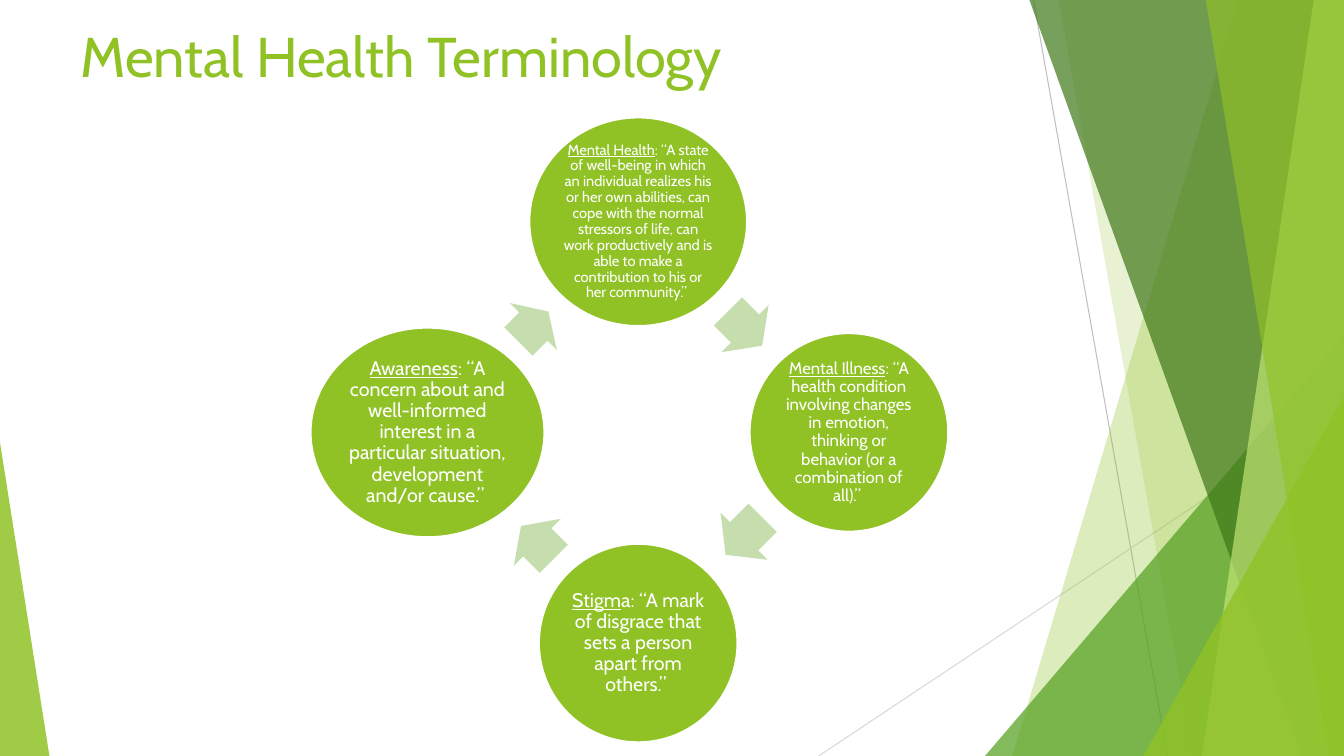
import math

from lxml import etree
from pptx import Presentation
from pptx.dml.color import RGBColor
from pptx.enum.shapes import MSO_CONNECTOR, MSO_SHAPE
from pptx.enum.text import MSO_ANCHOR, PP_ALIGN
from pptx.oxml.ns import qn
from pptx.util import Inches, Pt

STRAIGHT = MSO_CONNECTOR.STRAIGHT
ELLIPSE = MSO_SHAPE.OVAL
TRIANGLE = MSO_SHAPE.ISOSCELES_TRIANGLE
ARROW = MSO_SHAPE.RIGHT_ARROW
CENTER = PP_ALIGN.CENTER
TOP = MSO_ANCHOR.TOP
MIDDLE = MSO_ANCHOR.MIDDLE

WIDTH, HEIGHT = 13.33, 7.5
GREEN = "90C226"
WHITE = "FFFFFF"


def color(value):
    return RGBColor.from_string(value)


class SlideStyle:
    """Draws elements on one slide in a shared green style."""

    font = "Cabin"

    def __init__(self, slide):
        self.shapes = slide.shapes

    def line(self, start, end, stroke):
        ray = self.shapes.add_connector(STRAIGHT, *map(Inches, start + end))
        ray.line.color.rgb = color(stroke)
        ray.line.width = Pt(0.75)
        etree.SubElement(ray.element.spPr, qn("a:effectLst"))

    def paint(self, shape, fill, opacity=100):
        shape.shadow.inherit = False
        shape.fill.solid()
        shape.fill.fore_color.rgb = color(fill)
        shape.line.fill.background()
        if opacity < 100:
            tone = shape.element.spPr.find(qn("a:solidFill")).find(qn("a:srgbClr"))
            etree.SubElement(tone, qn("a:alpha"), val=str(opacity * 1000))

    def band(self, top_left, bottom_left, fill, opacity):
        corners = [(WIDTH, 0), (WIDTH, HEIGHT), (bottom_left, HEIGHT)]
        outline = self.shapes.build_freeform(Inches(top_left), 0)
        outline.add_line_segments([(Inches(x), Inches(y)) for x, y in corners])
        self.paint(outline.convert_to_shape(), fill, opacity)

    def triangle(self, left, top, width, apex, fill, opacity):
        box = map(Inches, (left, top, width, HEIGHT - top))
        wedge = self.shapes.add_shape(TRIANGLE, *box)
        wedge.adjustments[0] = apex
        self.paint(wedge, fill, opacity)

    def centered(self, kind, x, y, width, height):
        box = map(Inches, (x - width / 2, y - height / 2, width, height))
        return self.shapes.add_shape(kind, *box)

    def format_runs(self, paragraph, size, fill):
        paragraph.alignment = CENTER
        for run in paragraph.runs:
            run.font.name = self.font
            run.font.size = Pt(size)
            run.font.color.rgb = color(fill)

    def title(self, text):
        box = map(Inches, (-0.72, 0.16, 9.4, 1.44))
        frame = self.shapes.add_textbox(*box).text_frame
        frame.word_wrap = True
        frame.vertical_anchor = TOP
        frame.text = text
        self.format_runs(frame.paragraphs[0], 40, GREEN)

    def definition(self, x, y, width, height, size, term, meaning):
        circle = self.centered(ELLIPSE, x, y, width, height)
        self.paint(circle, GREEN)
        circle.line.color.rgb = color(WHITE)
        circle.line.width = Pt(1.5)
        frame = circle.text_frame
        frame.word_wrap = True
        frame.vertical_anchor = MIDDLE
        frame.margin_left = frame.margin_right = Inches(0.02)
        frame.margin_top = frame.margin_bottom = Inches(0.02)
        paragraph = frame.paragraphs[0]
        paragraph.line_spacing = 0.9
        for text in (term, meaning):
            paragraph.add_run().text = text
        paragraph.runs[0].font.underline = True
        self.format_runs(paragraph, size, WHITE)

    def arrow(self, x, y, length, angle):
        pointer = self.centered(ARROW, x, y, length, 0.66)
        pointer.adjustments[0] = 0.6
        pointer.adjustments[1] = 0.5
        pointer.rotation = angle
        self.paint(pointer, "C6DDAD")


def main():
    deck = Presentation()
    deck.slide_width, deck.slide_height = Inches(WIDTH), Inches(HEIGHT)
    page = SlideStyle(deck.slides.add_slide(deck.slide_layouts[6]))

    page.line((10.25, 0), (11.58, HEIGHT), "BFBFBF")
    page.line((WIDTH, 4.03), (8.12, HEIGHT), "D9D9D9")
    page.band(12.28, 10.04, GREEN, 30)
    page.band(10.5, 11.83, GREEN, 20)
    page.triangle(9.77, 3.33, 3.56, 1, "54A021", 72)
    page.band(10.21, 12.91, "3F7819", 70)
    page.band(13.03, 11.92, "C0E474", 70)
    page.band(11.96, 13.18, GREEN, 65)
    page.triangle(11.34, 3.93, 1.99, 1, GREEN, 80)
    page.triangle(0, 4.39, 0.49, 0, GREEN, 85)

    page.title("Mental Health Terminology")

    cycle_x, cycle_y, radius = 6.33, 4.29, 2.09
    definitions = [
        (2.16, 2.07, 10.5, "Mental Health",
         ": “A state of well-being in which an individual realizes his or her own "
         "abilities, can cope with the normal stressors of life, can work productively "
         "and is able to make a contribution to his or her community.” "),
        (1.97, 1.97, 12, "Mental Illness",
         ": “A health condition involving changes in emotion, thinking or behavior "
         "(or a combination of all).” "),
        (1.97, 1.97, 14, "Stigm",
         "a: “A mark of disgrace that sets a person apart from others.” "),
        (2.32, 2.08, 14, "Awareness",
         ": “A concern about and well-informed interest in a particular situation, "
         "development and/or cause.” "),
    ]
    arrows = [(7.39, 3.26, 0.48), (7.38, 5.32, 0.52), (5.33, 5.38, 0.46), (5.29, 3.24, 0.42)]
    for step, (definition, arrow) in enumerate(zip(definitions, arrows)):
        turn = math.radians(90 * step)
        x = cycle_x + radius * math.sin(turn)
        y = cycle_y - radius * math.cos(turn)
        page.definition(x, y, *definition)
        page.arrow(*arrow, 45 + 90 * step)

    deck.save("out.pptx")


if __name__ == "__main__":
    main()
